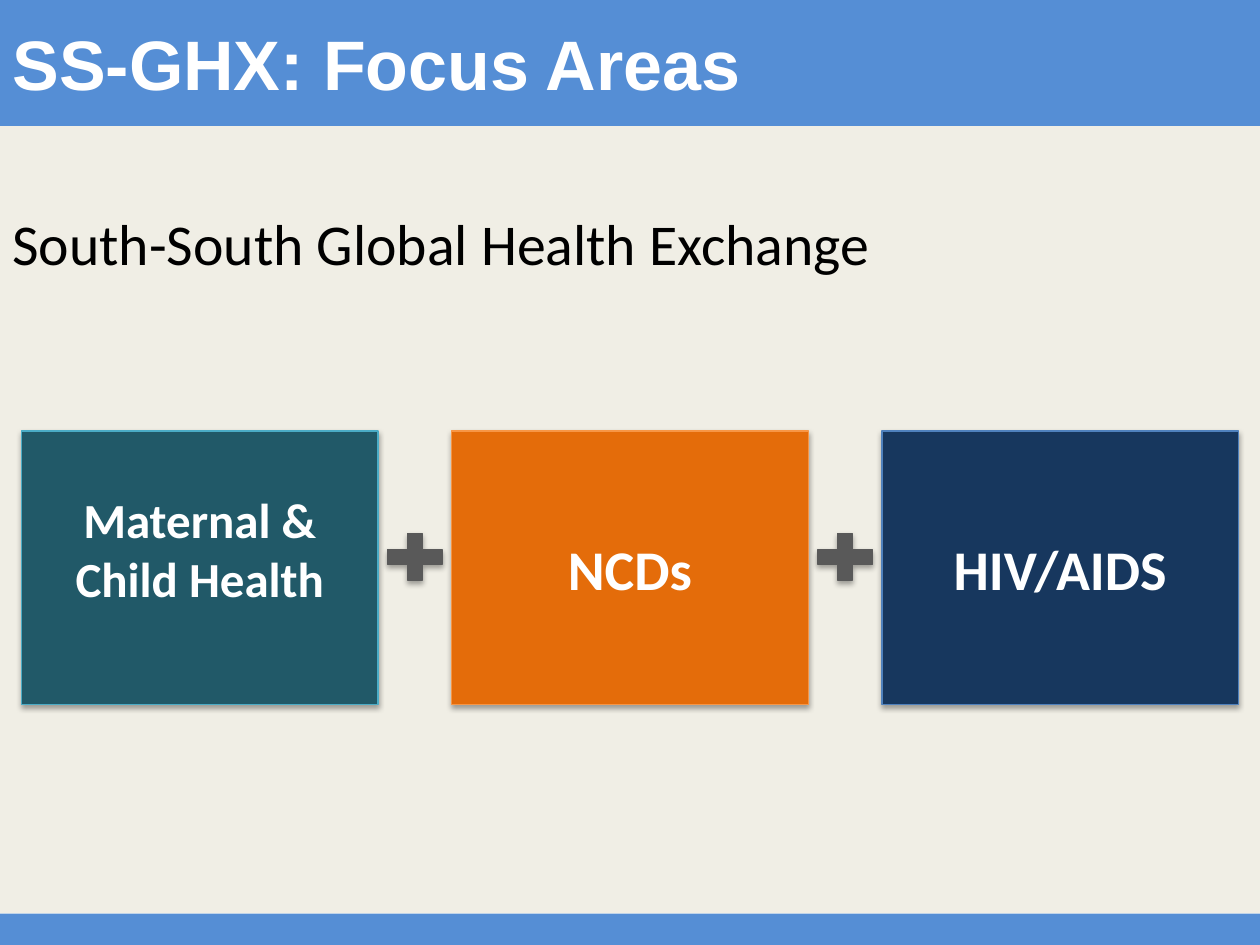
from lxml import etree
from pptx import Presentation
from pptx.dml.color import RGBColor
from pptx.enum.shapes import MSO_SHAPE
from pptx.enum.text import MSO_ANCHOR, PP_ALIGN
from pptx.oxml.ns import qn
from pptx.util import Inches, Pt

RECT, PLUS = MSO_SHAPE.RECTANGLE, MSO_SHAPE.MATH_PLUS
MIDDLE, TOP = MSO_ANCHOR.MIDDLE, MSO_ANCHOR.TOP
LEFT, CENTER = PP_ALIGN.LEFT, PP_ALIGN.CENTER

BLUE = RGBColor(0x55, 0x8E, 0xD5)
CREAM = RGBColor(0xEE, 0xEC, 0xE1)
GRAY = RGBColor(0x59, 0x59, 0x59)
WHITE = RGBColor(0xFF, 0xFF, 0xFF)
BLACK = RGBColor(0x00, 0x00, 0x00)
TEAL, TEAL_EDGE = RGBColor(0x21, 0x59, 0x68), RGBColor(0x4B, 0xAC, 0xC6)
ORANGE, ORANGE_EDGE = RGBColor(0xE4, 0x6C, 0x0A), RGBColor(0xF7, 0x96, 0x46)
NAVY, NAVY_EDGE = RGBColor(0x17, 0x37, 0x5E), RGBColor(0x4F, 0x81, 0xBD)

# text, size, fill, edge, bottom inset
AREAS = [
    ("Maternal & Child Health", 28, TEAL, TEAL_EDGE, 0.35),
    ("NCDs", 32, ORANGE, ORANGE_EDGE, 0.05),
    ("HIV/AIDS", 32, NAVY, NAVY_EDGE, 0.05),
]


def add_shadow(sp):
    effects = sp._element.spPr.find(qn("a:effectLst"))
    shadow = etree.SubElement(effects, qn("a:outerShdw"), blurRad="40000",
                              dist="23000", dir="5400000", rotWithShape="0")
    color = etree.SubElement(shadow, qn("a:srgbClr"), val="000000")
    etree.SubElement(color, qn("a:alpha"), val="35000")


def add_block(slide, kind, box, fill, edge=None):
    """Add a filled shape; one with an edge also casts a shadow."""
    sp = slide.shapes.add_shape(kind, *map(Inches, box))
    sp.shadow.inherit = False
    sp.fill.solid()
    sp.fill.fore_color.rgb = fill
    if edge is None:
        sp.line.fill.background()
    else:
        sp.line.color.rgb = edge
        sp.line.width = Pt(0.75)
        add_shadow(sp)
    return sp


def write(sp, text, size, color, font="Calibri", bold=False, align=LEFT, **frame):
    tf = sp.text_frame
    for name, value in {"word_wrap": True, "vertical_anchor": MIDDLE, **frame}.items():
        setattr(tf, name, value)
    p = tf.paragraphs[0]
    p.alignment = align
    r = p.add_run()
    r.text = text
    for name, value in {"name": font, "size": Pt(size), "bold": bold}.items():
        setattr(r.font, name, value)
    r.font.color.rgb = color


def place_title(slide, box):
    title = slide.shapes.title
    title.left, title.top, title.width, title.height = map(Inches, box)
    title.fill.solid()
    title.fill.fore_color.rgb = BLUE
    write(title, "SS-GHX: Focus Areas", 40, WHITE, font="Arial", bold=True)


def add_body(slide, box):
    body = add_block(slide, RECT, box, CREAM)
    color = body._element.spPr.find(qn("a:solidFill"))[0]
    etree.SubElement(color, qn("a:alpha"), val="85000")
    write(body, "South-South Global Health Exchange", 33, BLACK,
          vertical_anchor=TOP, margin_top=Inches(0.65))


def add_focus_areas(slide, box):
    """Add equal tiles across the box, with a plus sign in each gap."""
    left, top, width, height = box
    tile_w, plus_h = 2.83, 0.5
    step = (width - tile_w) / (len(AREAS) - 1)
    for i, (text, size, fill, edge, inset) in enumerate(AREAS):
        x = left + i * step
        tile = add_block(slide, RECT, (x, top, tile_w, height), fill, edge)
        write(tile, text, size, WHITE, bold=True, align=CENTER,
              margin_bottom=Inches(inset))
        if i:
            gap = step - tile_w
            add_block(slide, PLUS, (x - gap, top + 0.75, gap, plus_h), GRAY, GRAY)


def main():
    prs = Presentation()
    prs.slide_width, prs.slide_height = Inches(10), Inches(7.5)
    slide = prs.slides.add_slide(prs.slide_layouts[5])
    place_title(slide, (0, 0, 10, 1))
    add_body(slide, (0, 1, 10, 6.25))
    add_block(slide, RECT, (0, 7.25, 10, 0.25), BLUE)
    add_focus_areas(slide, (0.17, 3.42, 9.66, 2.17))
    prs.save("out.pptx")


if __name__ == "__main__":
    main()
